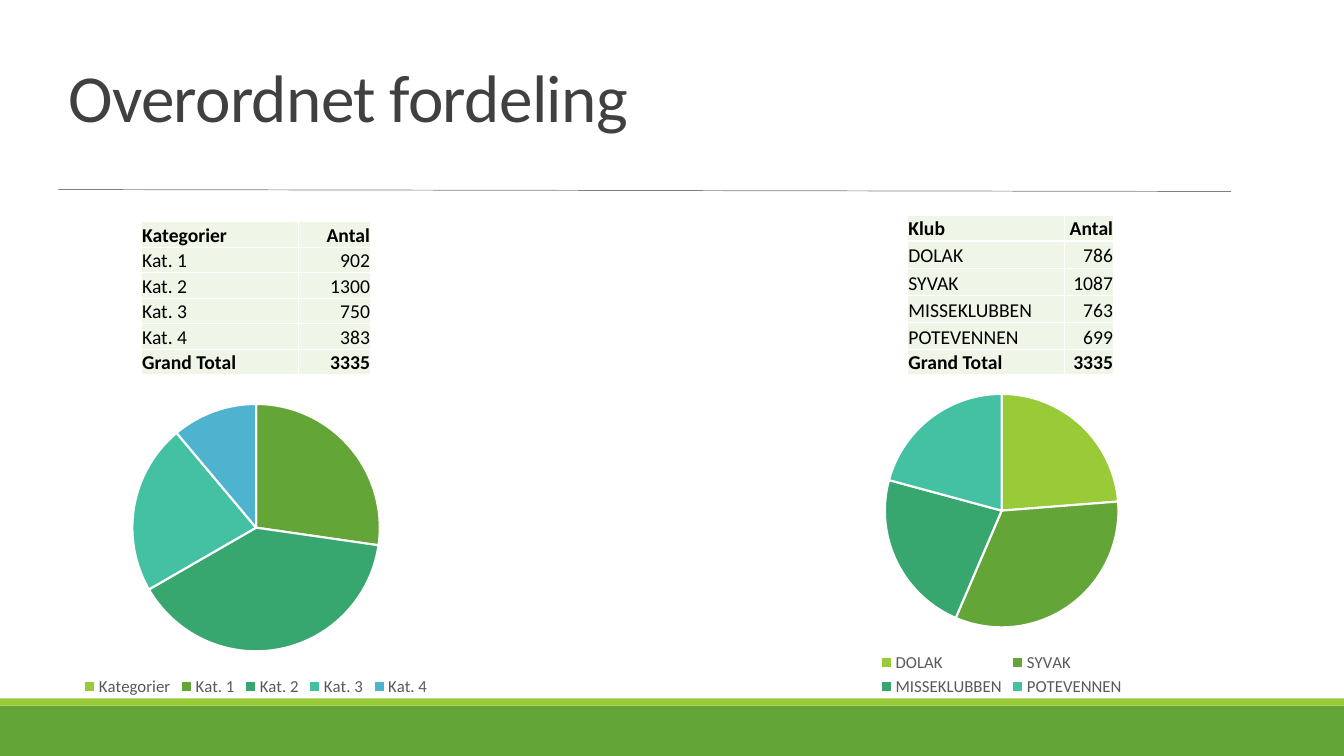
"""Build the slide that shows entries by category and by club."""
import dataclasses

import pptx
import pptx.chart.data
import pptx.dml.color
import pptx.enum.chart
import pptx.enum.shapes
import pptx.enum.text
import pptx.oxml
import pptx.oxml.ns
import pptx.util

Inches = pptx.util.Inches
Pt = pptx.util.Pt
RGBColor = pptx.dml.color.RGBColor
ALIGN = pptx.enum.text.PP_ALIGN
ANCHOR = pptx.enum.text.MSO_ANCHOR


@dataclasses.dataclass(frozen=True)
class Theme:
    """Colours and type sizes of the slide."""
    font: str = "Calibri"
    title: str = "404040"
    text: str = "000000"
    legend: str = "595959"
    rule: str = "808080"
    cell: str = "EFF6E8"
    white: str = "FFFFFF"
    lime: str = "99CB38"
    green: str = "63A537"
    slices: tuple = ("99CB38", "63A537", "37A76F", "44C1A3", "4EB3CF")
    title_size: int = 48
    table_size: int = 14
    legend_size: int = 12
    chart_size: int = 10


def apply(target, values):
    """Set every attribute named in values on target."""
    for name, value in values.items():
        setattr(target, name, value)


def paint(fill, color):
    """Give a fill one solid colour."""
    fill.solid()
    fill.fore_color.rgb = RGBColor.from_string(color)


class SlideBuilder:
    """Hold the theme and the current slide and add elements to it."""

    def __init__(self, slide, theme):
        self.slide = slide
        self.theme = theme

    def style_font(self, font, size, color, bold=False):
        apply(font, {"name": self.theme.font, "size": Pt(size), "bold": bold})
        font.color.rgb = RGBColor.from_string(color)

    def band(self, top, height, color):
        shape = self.slide.shapes.add_shape(
            pptx.enum.shapes.MSO_SHAPE.RECTANGLE,
            Inches(0), Inches(top), Inches(13.33), Inches(height))
        shape.shadow.inherit = False
        paint(shape.fill, color)
        shape.line.fill.background()

    def rule(self, start, end):
        connector = self.slide.shapes.add_connector(
            pptx.enum.shapes.MSO_CONNECTOR.STRAIGHT, *map(Inches, start + end))
        paint(connector.line.fill, self.theme.rule)
        connector.line.width = Pt(0.5)
        properties = connector._element.spPr
        properties.append(pptx.oxml.parse_xml(
            f"<a:effectLst {pptx.oxml.ns.nsdecls('a')}/>"))

    def title(self, text, box):
        shape = self.slide.shapes.add_textbox(*map(Inches, box))
        apply(shape.text_frame, {"word_wrap": True, "vertical_anchor": ANCHOR.MIDDLE})
        paragraph = shape.text_frame.paragraphs[0]
        paragraph.line_spacing = 0.85
        run = paragraph.add_run()
        run.text = text
        self.style_font(run.font, self.theme.title_size, self.theme.title)
        run._r.get_or_add_rPr().set("spc", "-50")

    def cell(self, cell, text, align, bold):
        apply(cell, {
            "text": text, "vertical_anchor": ANCHOR.BOTTOM,
            "margin_left": Inches(0.01), "margin_right": Inches(0.01),
            "margin_top": Inches(0.01), "margin_bottom": Inches(0)})
        paragraph = cell.text_frame.paragraphs[0]
        paragraph.alignment = align
        self.style_font(paragraph.runs[0].font, self.theme.table_size,
                        self.theme.text, bold)
        properties = cell._tc.get_or_add_tcPr()
        for side in "LRTB":
            properties.append(pptx.oxml.parse_xml(
                f'<a:ln{side} {pptx.oxml.ns.nsdecls("a")} w="{Pt(1)}"><a:solidFill>'
                f'<a:srgbClr val="{self.theme.white}"/></a:solidFill></a:ln{side}>'))
        paint(cell.fill, self.theme.cell)

    def table(self, rows, place, widths, heights):
        size = (sum(widths), sum(heights))
        table = self.slide.shapes.add_table(
            len(rows), len(widths), *map(Inches, place + size)).table
        apply(table, {"first_row": False, "horz_banding": False})
        for column, width in zip(table.columns, widths):
            column.width = Inches(width)
        for index, (row, height) in enumerate(zip(rows, heights)):
            table.rows[index].height = Inches(height)
            bold = index in (0, len(rows) - 1)
            for column, align in enumerate((ALIGN.LEFT, ALIGN.RIGHT)):
                self.cell(table.cell(index, column), str(row[column]), align, bold)

    def pie(self, shares, box):
        data = pptx.chart.data.CategoryChartData()
        data.categories = list(shares)
        data.add_series("Series 1", shares.values())
        chart = self.slide.shapes.add_chart(
            pptx.enum.chart.XL_CHART_TYPE.PIE, *map(Inches, box), data).chart
        apply(chart, {"has_title": False, "has_legend": True})
        self.style_font(chart.font, self.theme.chart_size, self.theme.text)
        apply(chart.legend, {
            "position": pptx.enum.chart.XL_LEGEND_POSITION.BOTTOM,
            "include_in_layout": False})
        self.style_font(chart.legend.font, self.theme.legend_size, self.theme.legend)
        plot = chart.plots[0]
        plot.vary_by_categories = True
        for index, color in enumerate(self.theme.slices[:len(shares)]):
            slice_format = plot.series[0].points[index].format
            paint(slice_format.fill, color)
            paint(slice_format.line.fill, self.theme.white)
            slice_format.line.width = Pt(1.5)


def main():
    """Build and save the presentation."""
    presentation = pptx.Presentation()
    apply(presentation, {"slide_width": Inches(13.33), "slide_height": Inches(7.5)})
    theme = Theme()
    slide = presentation.slides.add_slide(presentation.slide_layouts[6])
    builder = SlideBuilder(slide, theme)
    builder.band(7, 0.5, theme.green)
    builder.band(6.93, 0.07, theme.lime)
    builder.rule((0.58, 1.88), (12.21, 1.9))
    builder.title("Overordnet fordeling", (0.58, 0.29, 11.62, 1.45))

    categories = [("Kategorier", "Antal"), ("Kat. 1", 902), ("Kat. 2", 1300),
                  ("Kat. 3", 750), ("Kat. 4", 383), ("Grand Total", 3335)]
    clubs = [("Klub", "Antal"), ("DOLAK", 786), ("SYVAK", 1087),
             ("MISSEKLUBBEN", 763), ("POTEVENNEN", 699), ("Grand Total", 3335)]
    builder.table(categories, (1.4, 2.2), (1.56, 0.72), [1.52 / 6] * 6)
    builder.table(clubs, (9, 2.14), (1.56, 0.49), [0.25] + [0.27] * 4 + [0.25])

    category_names = [name for name, _ in categories[:-1]]
    club_names = [name for name, _ in clubs[1:-1]]
    builder.pie(dict(zip(category_names, (0, 27, 39, 22, 11))), (0, 3.87, 5.08, 3.08))
    builder.pie(dict(zip(club_names, (24, 33, 23, 21))), (7.38, 3.77, 5.11, 3.18))
    presentation.save("out.pptx")


if __name__ == "__main__":
    main()
